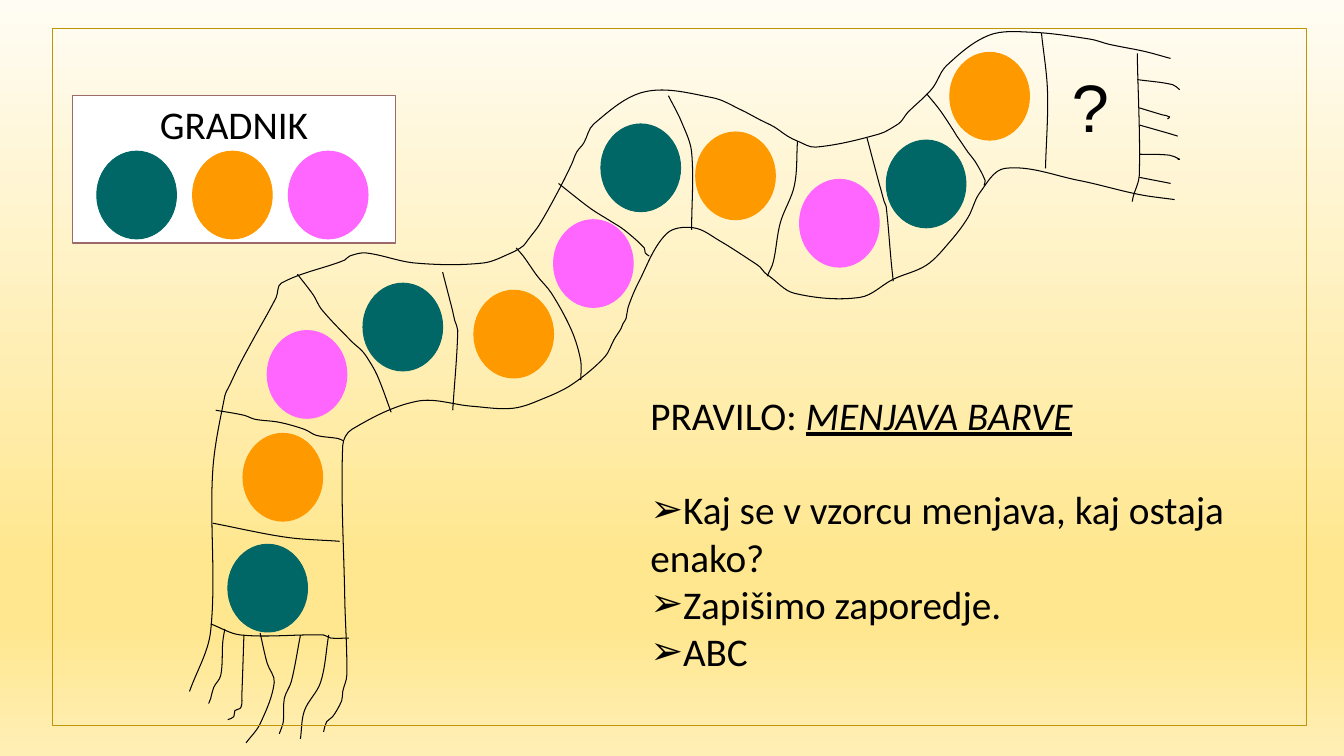
from copy import deepcopy
from itertools import cycle

from lxml.etree import SubElement
from pptx import Presentation
from pptx.dml.color import RGBColor
from pptx.enum.shapes import MSO_SHAPE as Preset
from pptx.enum.text import MSO_ANCHOR as Anchor, MSO_AUTO_SIZE as AutoSize, PP_ALIGN as Align
from pptx.oxml.ns import qn
from pptx.util import Inches, Pt

CELL = Inches(0.01)
COLUMNS, ROWS = 1333, 750
BEAD_SIZE = (79, 87)

BLACK = RGBColor(0x00, 0x00, 0x00)
WHITE = RGBColor(0xFF, 0xFF, 0xFF)
TEAL = RGBColor(0x00, 0x66, 0x66)
ORANGE = RGBColor(0xFF, 0x99, 0x00)
PINK = RGBColor(0xFF, 0x66, 0xFF)
CARD_EDGE = RGBColor(0x9C, 0x6A, 0x6A)
FRAME_EDGE = RGBColor(0xBD, 0x95, 0x06)
CREAM = RGBColor(0xFF, 0xFC, 0xF3)
GOLD = RGBColor(0xFF, 0xE7, 0x90)
SAND = RGBColor(0xFF, 0xEF, 0xB5)
BACKDROP = [(0, CREAM), (0.74, GOLD), (0.83, GOLD), (1, SAND)]
UNIT = [TEAL, ORANGE, PINK]

EDGES = [
    [(188, 686), (209, 626), (211, 468), (223, 393), (228, 382), (237, 363),
     (251, 337), (274, 295), (279, 281), (337, 260), (342, 258), (347, 254),
     (363, 251), (412, 261), (479, 261), (507, 251), (519, 244), (523, 239),
     (526, 235), (535, 223), (553, 191), (567, 163), (572, 151), (579, 142),
     (589, 123), (640, 91), (707, 97), (735, 109), (754, 119), (768, 126),
     (781, 135), (791, 140), (809, 146), (872, 133), (891, 123), (895, 119),
     (900, 112), (918, 95), (926, 86), (939, 65), (981, 35), (1023, 32),
     (1082, 39), (1100, 44), (1135, 51), (1161, 58)],
    [(321, 726), (324, 716), (330, 711), (339, 695), (340, 686), (344, 670),
     (342, 593), (340, 442), (349, 426), (414, 398), (468, 403), (509, 405),
     (540, 395), (568, 381), (600, 354), (609, 337), (616, 326), (618, 321),
     (621, 316), (623, 305), (633, 281), (661, 232), (688, 226), (714, 239),
     (747, 260), (754, 265), (758, 270), (763, 274), (788, 291), (853, 295),
     (886, 277), (919, 263), (942, 240), (960, 216), (972, 191), (997, 167),
     (1070, 179), (1130, 193), (1165, 198)],
]
SEAMS = [
    [(209, 619), (239, 630), (321, 630), (328, 633), (346, 633)],
    [(211, 519), (284, 533), (337, 537)],
    [(214, 407), (242, 412), (253, 416), (277, 419), (302, 426), (314, 432),
     (335, 435), (340, 437)],
    [(295, 272), (311, 293), (319, 307), (349, 339), (358, 347), (363, 353),
     (374, 372), (388, 409)],
    [(439, 270), (449, 309), (451, 318), (454, 328), (449, 407)],
    [(512, 246), (519, 254), (533, 274), (547, 291), (567, 328), (576, 358), (576, 377)],
    [(554, 182), (586, 207), (605, 219), (619, 228), (639, 246), (640, 251), (644, 254)],
    [(663, 95), (676, 121), (686, 151), (686, 228)],
    [(791, 140), (788, 184), (774, 221), (767, 260), (761, 274)],
    [(860, 137), (872, 182), (874, 189), (877, 200), (879, 205), (884, 260), (886, 279)],
    [(919, 93), (932, 109), (946, 130), (949, 135), (954, 142), (960, 151),
     (967, 160), (977, 179), (976, 184)],
    [(1033, 33), (1039, 91), (1037, 167)],
    [(1128, 53), (1130, 174), (1124, 195), (1123, 200)],
]
FRINGE = [
    [(223, 624), (221, 637), (219, 670), (212, 682), (209, 693), (207, 698)],
    [(242, 630), (240, 688), (239, 702), (233, 705), (232, 711), (226, 714)],
    [(326, 630), (318, 677), (302, 705), (298, 733)],
    [(258, 628), (265, 658), (272, 677), (258, 718), (244, 737)],
    [(298, 630), (289, 676), (282, 693), (281, 716), (277, 728)],
    [(1128, 79), (1163, 84), (1170, 89)],
    [(1130, 107), (1153, 114), (1160, 116), (1158, 118)],
    [(1130, 176), (1161, 182)],
    [(1130, 153), (1160, 154), (1170, 158), (1168, 158)],
    [(1130, 124), (1158, 132), (1168, 135)],
]
BEADS = [(226, 540), (241, 430), (265, 328), (360, 281), (470, 288), (549, 218),
         (596, 123), (690, 131), (793, 178), (879, 139), (942, 52)]
LEGEND = [(96 + 95 * place, 150) for place in range(len(UNIT))]
TASKS = ["Kaj se v vzorcu menjava, kaj ostaja enako?", "Zapišimo zaporedje.", "ABC"]


def cells(*counts):
    return [count * CELL for count in counts]


def outline(shape, color, width):
    shape.line.color.rgb = color
    shape.line.width = Pt(width)


def bend(thread):
    points = list(thread._element.iter(qn("a:pt")))
    spots = [complex(int(point.get("x")), int(point.get("y"))) for point in points]
    around = [spots[0], *spots, spots[-1]]
    slopes = [(after - before) / abs(after - before)
              for before, after in zip(around, around[2:])]
    for place, point in enumerate(points[1:]):
        start, end = spots[place:place + 2]
        reach = abs(end - start) / 3
        segment = point.getparent()
        segment.tag = qn("a:cubicBezTo")
        segment.remove(point)
        for spot in (start + slopes[place] * reach, end - slopes[place + 1] * reach, end):
            SubElement(segment, qn("a:pt"), x=str(round(spot.real)), y=str(round(spot.imag)))


def add_thread(slide, corners):
    start, *rest = corners
    builder = slide.shapes.build_freeform(*cells(*start), scale=1.0)
    builder.add_line_segments([cells(*corner) for corner in rest], close=False)
    thread = builder.convert_to_shape()
    bend(thread)
    thread.shadow.inherit = False
    thread.fill.background()
    outline(thread, BLACK, 0.75)


def add_beads(slide, corners):
    for corner, color in zip(corners, cycle(UNIT)):
        bead = slide.shapes.add_shape(Preset.OVAL, *cells(*corner, *BEAD_SIZE))
        bead.shadow.inherit = False
        bead.fill.solid()
        bead.fill.fore_color.rgb = color
        outline(bead, color, 0.75)


def place_text(shape, left, top, width, height):
    shape.left, shape.top, shape.width, shape.height = cells(left, top, width, height)
    shape.text_frame.auto_size = AutoSize.NONE
    shape.text_frame.vertical_anchor = Anchor.TOP


def format_line(paragraph, size, font="Calibri"):
    paragraph.space_before = Pt(0)
    paragraph.font.size = Pt(size)
    paragraph.font.name = font
    paragraph.font.color.rgb = BLACK


def set_bullet(paragraph, mark=None):
    properties = paragraph._p.get_or_add_pPr()
    properties.set("marL", "0")
    properties.set("indent", "0")
    if mark:
        SubElement(properties, qn("a:buChar")).set("char", mark)
    else:
        SubElement(properties, qn("a:buNone"))


def paint_backdrop(slide):
    fill = slide.background.fill
    fill.gradient()
    fill.gradient_angle = 270
    stop_list = fill._fill._gradFill.find(qn("a:gsLst"))
    for _ in range(len(BACKDROP) - len(stop_list)):
        stop_list.append(deepcopy(stop_list[0]))
    for stop, (position, color) in zip(fill.gradient_stops, BACKDROP):
        stop.position = position
        stop.color.rgb = color


def write_card(card):
    place_text(card, 72, 95, 320, 146)
    card.text_frame.margin_top = Inches(0.04)
    card.fill.solid()
    card.fill.fore_color.rgb = WHITE
    outline(card, CARD_EDGE, 1)
    card.text_frame.text = "GRADNIK"
    heading = card.text_frame.paragraphs[0]
    heading.alignment = Align.CENTER
    format_line(heading, 28)


def write_rule(body):
    place_text(body, 635, 384, 667, 293)
    body.text_frame.margin_top = Inches(0.04)
    rule = body.text_frame.paragraphs[0]
    set_bullet(rule)
    rule.add_run().text = "PRAVILO: "
    answer = rule.add_run()
    answer.text = "MENJAVA BARVE"
    answer.font.italic = answer.font.underline = True
    format_line(rule, 28)
    rule.space_after = Pt(34)
    for task in TASKS:
        line = body.text_frame.add_paragraph()
        line.text = task
        set_bullet(line, "➢")
        format_line(line, 28)


def add_question(slide):
    question = slide.shapes.add_textbox(*cells(1053, 60, 63, 90))
    question.text_frame.word_wrap = True
    question.text_frame.text = "?"
    format_line(question.text_frame.paragraphs[0], 48, "Arial")


def add_frame(slide):
    frame = slide.shapes.add_shape(Preset.RECTANGLE, *cells(52, 28, 1244, 692))
    frame.shadow.inherit = False
    frame.fill.background()
    outline(frame, FRAME_EDGE, 1)


def main():
    deck = Presentation()
    deck.slide_width, deck.slide_height = cells(COLUMNS, ROWS)
    slide = deck.slides.add_slide(deck.slide_layouts[1])
    paint_backdrop(slide)
    write_card(slide.shapes.title)
    write_rule(slide.placeholders[1])
    for corners in EDGES + SEAMS + FRINGE:
        add_thread(slide, corners)
    add_beads(slide, BEADS)
    add_beads(slide, LEGEND)
    add_question(slide)
    add_frame(slide)
    deck.save("out.pptx")


if __name__ == "__main__":
    main()
